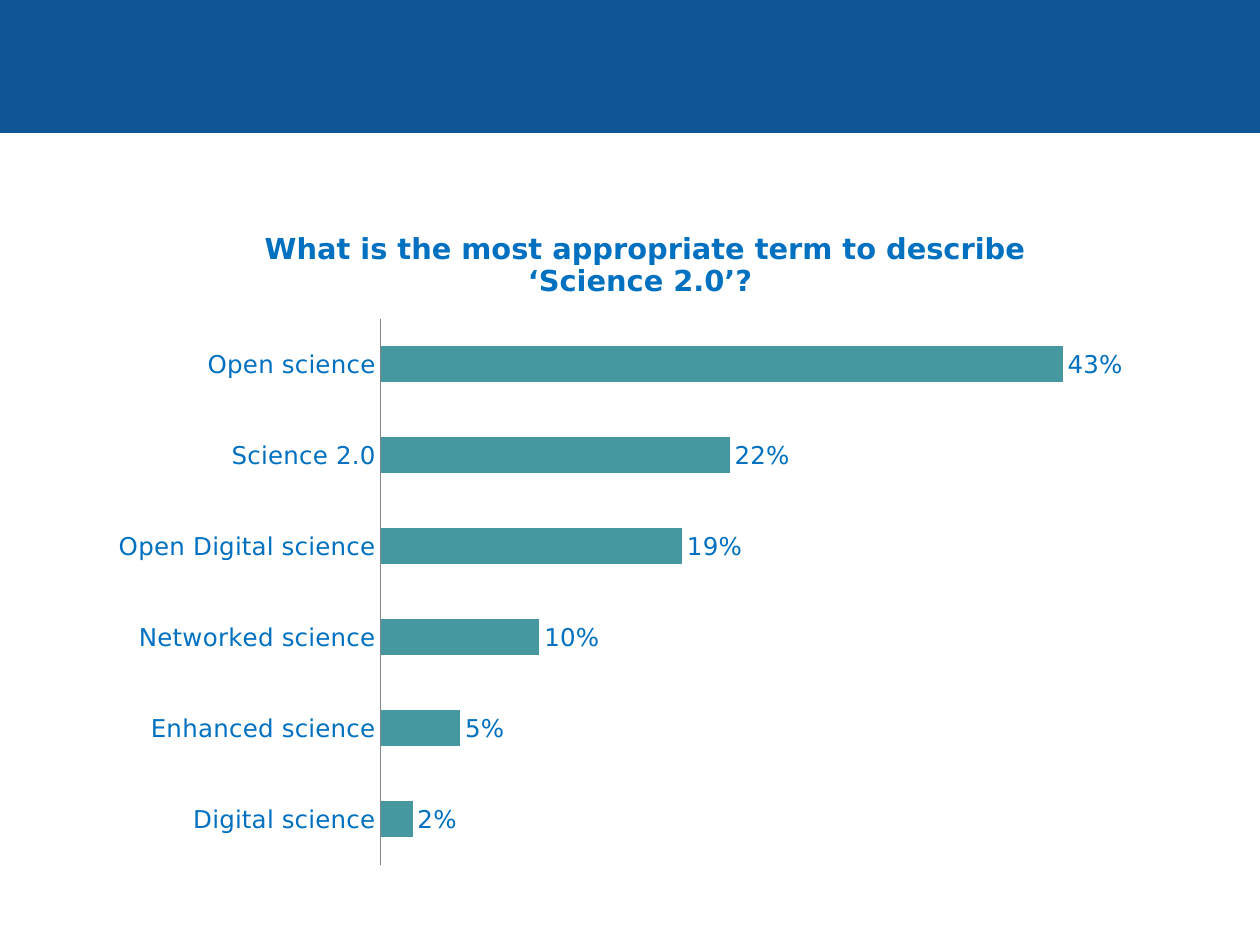
from dataclasses import dataclass

from lxml.etree import SubElement
from pptx import Presentation
from pptx.chart.data import CategoryChartData as Data
from pptx.dml.color import RGBColor as RGB
from pptx.enum.chart import XL_CHART_TYPE as Kind
from pptx.enum.chart import XL_LABEL_POSITION as Spot
from pptx.enum.chart import XL_TICK_MARK as Tick
from pptx.enum.shapes import MSO_SHAPE as Form
from pptx.oxml.ns import qn
from pptx.util import Inches, Pt


@dataclass(frozen=True)
class Theme:
    band: RGB = RGB.from_string("0F5494")
    text: RGB = RGB.from_string("0070C0")
    bar: RGB = RGB.from_string("4597A0")
    axis: RGB = RGB.from_string("878787")
    face: str = "DejaVu Sans"
    head: float = 16.5
    body: float = 14


THEME = Theme()
TITLE = "What is the most appropriate term to describe ‘Science 2.0’? "
VOTES = {
    "Digital science": 0.02,
    "Enhanced science": 0.05,
    "Networked science": 0.1,
    "Open Digital science": 0.19,
    "Science 2.0": 0.22,
    "Open science": 0.43,
}


def style(font, size, bold=False):
    font.name, font.size, font.bold = THEME.face, Pt(size), bold
    font.color.rgb = THEME.text


def add_band(slide, box):
    band = slide.shapes.add_shape(Form.RECTANGLE, *box)
    band.shadow.inherit = False
    band.fill.solid()
    band.fill.fore_color.rgb = THEME.band
    band.line.color.rgb = THEME.band
    band.line.width = Pt(0.75)


def fix_plot(chart, **area):
    """Set the inner plot area, in shares of the chart's size."""
    plot = chart.element.find(".//" + qn("c:plotArea"))
    for old in plot.findall(qn("c:layout")):
        plot.remove(old)
    layout = SubElement(plot, qn("c:layout"))
    plot.insert(0, layout)
    manual = SubElement(layout, qn("c:manualLayout"))
    parts = {"layoutTarget": "inner", "xMode": "edge", "yMode": "edge", **area}
    for name, value in parts.items():
        SubElement(manual, qn("c:" + name)).set("val", str(value))


def add_votes(slide, box):
    data = Data(number_format="0%")
    data.categories = list(VOTES)
    data.add_series("Series 1", list(VOTES.values()))
    chart = slide.shapes.add_chart(Kind.BAR_CLUSTERED, *box, data).chart
    style(chart.font, THEME.body)
    chart.has_legend = False
    chart.has_title = True
    run = chart.chart_title.text_frame.paragraphs[0].add_run()
    run.text = TITLE
    style(run.font, THEME.head, True)
    chart.chart_title.include_in_layout = False

    cats, vals = chart.category_axis, chart.value_axis
    cats.major_tick_mark = cats.minor_tick_mark = Tick.NONE
    cats.format.line.color.rgb = THEME.axis
    cats.format.line.width = Pt(0.75)
    vals.visible = vals.has_major_gridlines = False
    vals.minimum_scale, vals.maximum_scale = 0, 0.5

    plot = chart.plots[0]
    plot.gap_width, plot.overlap = 150, -25
    plot.vary_by_categories = False
    fill = plot.series[0].format.fill
    fill.solid()
    fill.fore_color.rgb = THEME.bar
    plot.has_data_labels = True
    labels = plot.data_labels
    labels.show_value = True
    labels.number_format, labels.number_format_is_linked = "0%", False
    labels.position = Spot.OUTSIDE_END
    style(labels.font, THEME.body)
    fix_plot(chart, x=0.26, y=0.17, w=0.72, h=0.81)


def main():
    deck = Presentation()
    wide, high = deck.slide_width, deck.slide_height = Inches(10), Inches(7.5)
    slide = deck.slides.add_slide(deck.slide_layouts[6])
    add_band(slide, (0, 0, wide, int(high * 0.14)))
    add_votes(slide, (Inches(0.75), Inches(1.62), Inches(8.74), Inches(5.35)))
    deck.save("out.pptx")


if __name__ == "__main__":
    main()
